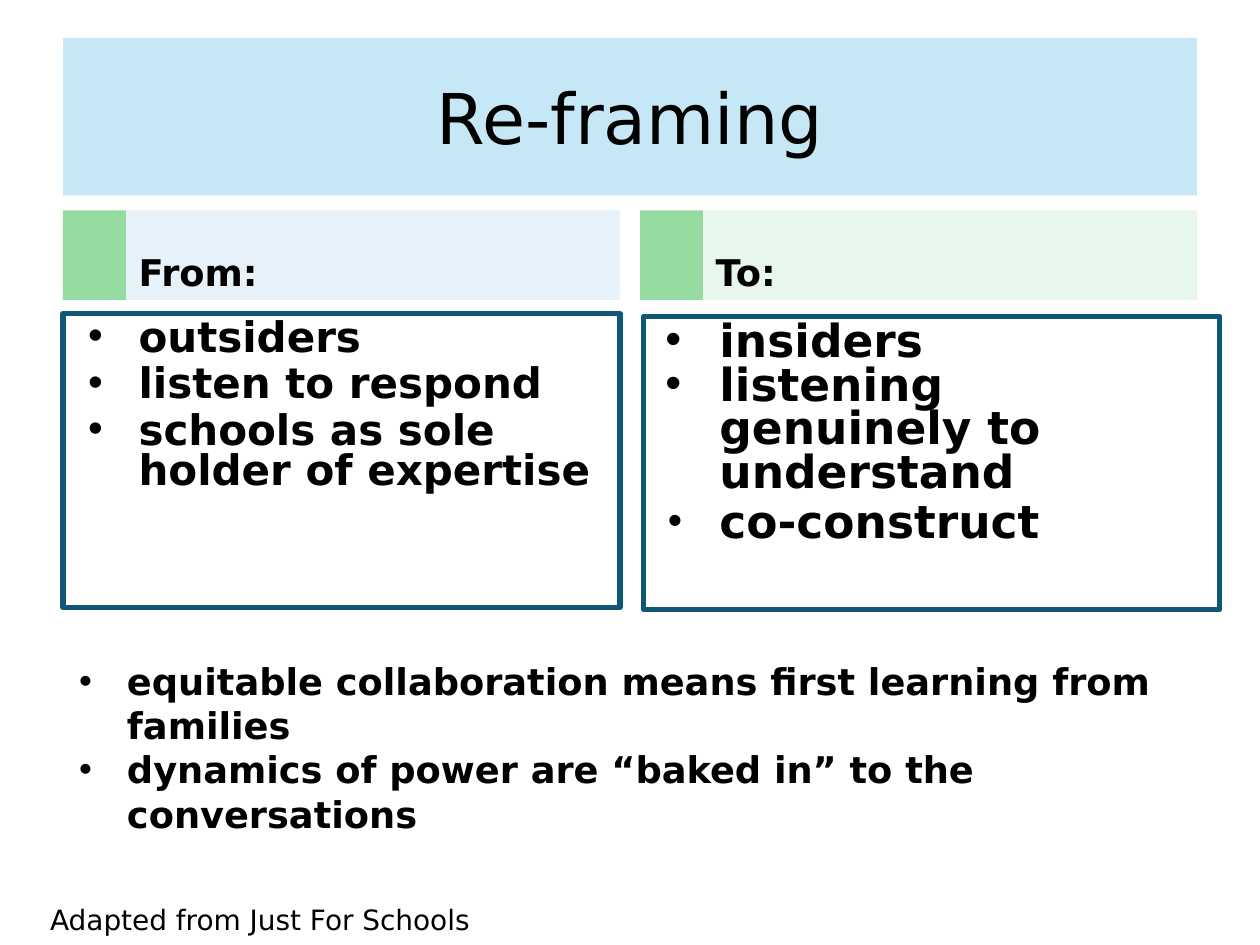
from lxml import etree
from pptx import Presentation
from pptx import util as u
from pptx.dml import color
from pptx.enum import shapes, text
from pptx.oxml import ns

FONT = "DejaVu Sans"
BLACK = "000000"
GREEN = "95DA9F"
TEAL = "105775"


def rgb(value):
    return color.RGBColor.from_string(value)


def place(shape, box):
    shape.left, shape.top, shape.width, shape.height = [u.Inches(n) for n in box]


def paint(shape, fill, alpha=None):
    shape.fill.solid()
    shape.fill.fore_color.rgb = rgb(fill)
    if alpha:
        solid = shape.fill._xPr.find(ns.qn("a:solidFill"))
        etree.SubElement(solid[0], ns.qn("a:alpha"), val=str(alpha * 1000))


def add_bullet(paragraph, indent, size=100):
    properties = paragraph._p.get_or_add_pPr()
    properties.set("marL", str(u.Inches(0.5)))
    properties.set("indent", str(u.Inches(-indent)))
    bullet_color = etree.SubElement(properties, ns.qn("a:buClr"))
    etree.SubElement(bullet_color, ns.qn("a:srgbClr"), val=BLACK)
    etree.SubElement(properties, ns.qn("a:buSzPct"), val=str(size * 1000))
    etree.SubElement(properties, ns.qn("a:buFont"), typeface="Arial")
    etree.SubElement(properties, ns.qn("a:buChar"), char="•")


def write(shape, lines, size, bold=True, anchor=text.MSO_ANCHOR.TOP, align=None,
          indent=None, spacing=1.0, before=0, inset=0.05, last=None):
    frame = shape.text_frame
    frame.word_wrap = True
    frame.auto_size = text.MSO_AUTO_SIZE.NONE
    frame.vertical_anchor = anchor
    frame.margin_left = frame.margin_right = u.Inches(0.1)
    frame.margin_top = frame.margin_bottom = u.Inches(inset)
    for index, line in enumerate(lines):
        paragraph = frame.paragraphs[0] if index == 0 else frame.add_paragraph()
        style = {"indent": indent, "before": before}
        if last and index == len(lines) - 1:
            style.update(last)
        if style["indent"]:
            add_bullet(paragraph, style["indent"], style.get("bullet_size", 100))
        paragraph.alignment = align
        paragraph.line_spacing = spacing
        paragraph.space_before = u.Pt(style["before"] if index else 0)
        run = paragraph.add_run()
        run.text = line
        run.font.name = FONT
        run.font.size = u.Pt(size)
        run.font.bold = bold
        run.font.color.rgb = rgb(BLACK)


def add_title(slide, box):
    title = slide.shapes.title
    place(title, box)
    paint(title, "A9DCF2", alpha=67)
    write(title, ["Re-framing"], 40, bold=False, anchor=text.MSO_ANCHOR.MIDDLE,
          align=text.PP_ALIGN.CENTER)


def add_heading(slide, placeholder, box, label, fill):
    left, top, width, height = box
    marker_width = 0.5
    marker = slide.shapes.add_shape(
        shapes.MSO_SHAPE.RECTANGLE, u.Inches(left), u.Inches(top),
        u.Inches(marker_width), u.Inches(height))
    marker.shadow.inherit = False
    paint(marker, GREEN)
    marker.line.fill.background()
    place(placeholder, (left + marker_width, top, width - marker_width, height))
    paint(placeholder, fill)
    write(placeholder, [label], 21, anchor=text.MSO_ANCHOR.BOTTOM)


def add_list(placeholder, box, lines, size, **style):
    place(placeholder, box)
    placeholder.line.color.rgb = rgb(TEAL)
    placeholder.line.width = u.Pt(3)
    write(placeholder, lines, size, spacing=0.8, **style)


def add_note(slide, box, lines, size, **style):
    note = slide.shapes.add_textbox(*[u.Inches(n) for n in box])
    write(note, lines, size, inset=0.1, **style)


def build():
    presentation = Presentation()
    presentation.slide_width = u.Inches(10)
    presentation.slide_height = u.Inches(7.5)
    comparison = presentation.slide_layouts.get_by_name("Comparison")
    slide = presentation.slides.add_slide(comparison)
    from_heading, from_list, to_heading, to_list = list(slide.placeholders)[1:5]

    add_title(slide, (0.5, 0.3, 9, 1.25))
    add_heading(slide, from_heading, (0.5, 1.67, 4.42, 0.71), "From:", "E7F1F9")
    add_list(from_list, (0.5, 2.49, 4.42, 2.33),
             ["outsiders", "listen to respond", "schools as sole holder of expertise"],
             24, indent=0.4, before=3.6)
    add_heading(slide, to_heading, (5.08, 1.67, 4.42, 0.71), "To:", "E8F7EB")
    add_list(to_list, (5.11, 2.51, 4.57, 2.33),
             ["insiders", "listening genuinely to understand", "co-construct"],
             26, indent=0.43,
             last={"indent": 0.41, "before": 3.6, "bullet_size": 90})
    add_note(slide, (0.41, 5.13, 9.1, 1.85),
             ["equitable collaboration means first learning from families",
              "dynamics of power are “baked in” to the conversations"],
             21, indent=0.38)
    add_note(slide, (0.3, 7.06, 8.04, 0.47), ["Adapted from Just For Schools"], 16,
             bold=False)
    presentation.save("out.pptx")


if __name__ == "__main__":
    build()
